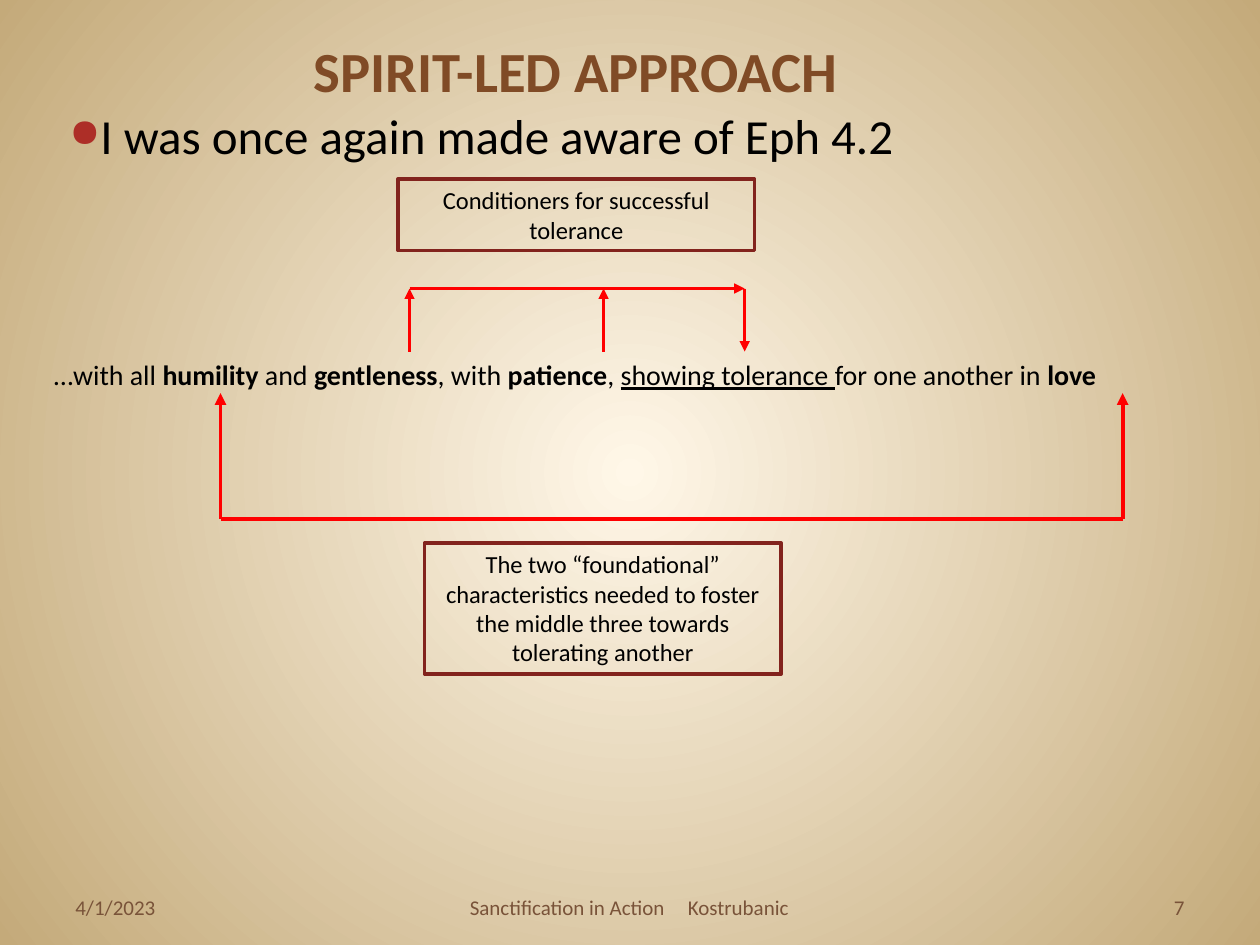
from dataclasses import dataclass

from lxml import etree
from pptx import Presentation
from pptx.dml.color import RGBColor
from pptx.enum.shapes import MSO_CONNECTOR, MSO_SHAPE
from pptx.enum.text import MSO_ANCHOR, PP_ALIGN
from pptx.oxml.ns import qn
from pptx.shapes.base import BaseShape
from pptx.slide import Slide
from pptx.text.text import TextFrame
from pptx.util import Pt

LEFT, CENTER, RIGHT = PP_ALIGN.LEFT, PP_ALIGN.CENTER, PP_ALIGN.RIGHT
TOP, MIDDLE, BOTTOM = MSO_ANCHOR.TOP, MSO_ANCHOR.MIDDLE, MSO_ANCHOR.BOTTOM
STRAIGHT, RECTANGLE = MSO_CONNECTOR.STRAIGHT, MSO_SHAPE.RECTANGLE


@dataclass(frozen=True)
class Theme:
    font: str = "Calibri"
    glow: str = "FFF7E8"
    edge: str = "C4AA7A"
    title: str = "804B26"
    text: str = "000000"
    footer: str = "795339"
    bullet: str = "AD2E27"
    arrow: str = "FF0000"
    frame: str = "82231D"
    title_size: float = 32.4
    body_size: float = 28
    verse_size: float = 16
    note_size: float = 14
    footer_size: float = 12
    frame_width: float = 2
    upper_line: float = 1.75
    lower_line: float = 2.25


THEME = Theme()


@dataclass(frozen=True)
class Run:
    text: str
    bold: bool = False
    underline: bool = False


@dataclass(frozen=True)
class Label:
    runs: tuple[Run, ...]
    left: float
    top: float
    width: float
    height: float
    size: float
    color: str = THEME.text
    align: PP_ALIGN = LEFT
    anchor: MSO_ANCHOR = TOP
    framed: bool = False


@dataclass(frozen=True)
class Line:
    start: tuple[float, float]
    end: tuple[float, float]
    width: float
    arrow: bool = True


def footer(text: str, left: float, width: float, align: PP_ALIGN = LEFT) -> Label:
    return Label((Run(text),), left, 491.76, width, 37.44,
                 THEME.footer_size, THEME.footer, align, BOTTOM)


def note(text: str, left: float, top: float, height: float) -> Label:
    return Label((Run(text),), left, top, 203.76, height,
                 THEME.note_size, align=CENTER, framed=True)


TITLE = Label((Run("SPIRIT-LED APPROACH", bold=True),), 36, 10.08, 586, 52.56,
              THEME.title_size, THEME.title, CENTER, BOTTOM)
BODY = Label((Run("I was once again made aware of Eph 4.2"),), 36, 56.88, 648, 44,
             THEME.body_size)
VERSE = Label(
    (
        Run("…with all "),
        Run("humility", bold=True),
        Run(" and "),
        Run("gentleness", bold=True),
        Run(", with "),
        Run("patience", bold=True),
        Run(", "),
        Run("showing tolerance ", underline=True),
        Run("for one another in "),
        Run("love", bold=True),
    ),
    23.76, 200.88, 642.24, 26.64, THEME.verse_size)
NOTES = (
    note("Conditioners for successful tolerance", 227.52, 102.24, 41.04),
    note("The two “foundational” characteristics needed to foster "
         "the middle three towards tolerating another", 242.64, 310.32, 74.88),
)
FOOTERS = (
    footer("4/1/2023", 36, 167.76),
    footer("Sanctification in Action", 261.4, 130),
    footer("Kostrubanic", 386, 88),
    footer("7", 516.24, 167.76, RIGHT),
)

GENTLENESS_X, PATIENCE_X, TOLERANCE_X = 234, 344.88, 425.52
HUMILITY_X, LOVE_X = 126, 641.52
UPPER_TOP, UPPER_BOTTOM = 164.88, 200.88
LOWER_TOP, LOWER_BOTTOM = 224.64, 296.64
LINES = (
    Line((HUMILITY_X, LOWER_BOTTOM), (LOVE_X, LOWER_BOTTOM), THEME.lower_line, False),
    *(Line((x, LOWER_BOTTOM), (x, LOWER_TOP), THEME.lower_line)
      for x in (HUMILITY_X, LOVE_X)),
    Line((GENTLENESS_X, UPPER_TOP), (TOLERANCE_X, UPPER_TOP), THEME.upper_line),
    *(Line((x, UPPER_BOTTOM), (x, UPPER_TOP), THEME.upper_line)
      for x in (GENTLENESS_X, PATIENCE_X)),
    Line((TOLERANCE_X, UPPER_TOP), (TOLERANCE_X, UPPER_BOTTOM), THEME.upper_line),
)


def rgb(color: str) -> RGBColor:
    return RGBColor.from_string(color)


def paint_background(slide: Slide) -> None:
    fill = slide.background.fill
    fill.gradient()
    for stop, color, position in zip(fill.gradient_stops, (THEME.glow, THEME.edge), (0, 1)):
        stop.color.rgb = rgb(color)
        stop.position = position
    gradient = slide.element.find(".//" + qn("a:gradFill"))
    gradient.remove(gradient.find(qn("a:lin")))
    circle = etree.SubElement(gradient, qn("a:path"), {"path": "circle"})
    sides = {side: "50000" for side in "ltrb"}
    etree.SubElement(circle, qn("a:fillToRect"), sides)


def write_text(frame: TextFrame, label: Label) -> None:
    frame.word_wrap = True
    frame.vertical_anchor = label.anchor
    paragraph = frame.paragraphs[0]
    paragraph.alignment = label.align
    paragraph.font.name = THEME.font
    paragraph.font.size = Pt(label.size)
    paragraph.font.color.rgb = rgb(label.color)
    for part in label.runs:
        run = paragraph.add_run()
        run.text = part.text
        if part.bold:
            run.font.bold = True
        if part.underline:
            run.font.underline = True


def add_label(slide: Slide, label: Label) -> BaseShape:
    bounds = [Pt(value) for value in (label.left, label.top, label.width, label.height)]
    if label.framed:
        shape = slide.shapes.add_shape(RECTANGLE, *bounds)
        shape.shadow.inherit = False
        shape.fill.background()
        shape.line.color.rgb = rgb(THEME.frame)
        shape.line.width = Pt(THEME.frame_width)
    else:
        shape = slide.shapes.add_textbox(*bounds)
    write_text(shape.text_frame, label)
    return shape


def add_bullet(shape: BaseShape) -> None:
    frame = shape.text_frame
    frame.margin_left = frame.margin_right = Pt(3.6)
    properties = frame.paragraphs[0]._p.get_or_add_pPr()
    properties.set("marL", "0")
    properties.set("indent", "0")
    bullet = (
        etree.Element(qn("a:buClr")),
        etree.Element(qn("a:buSzPct"), {"val": "80000"}),
        etree.Element(qn("a:buChar"), {"char": "●"}),
    )
    etree.SubElement(bullet[0], qn("a:srgbClr"), {"val": THEME.bullet})
    for index, element in enumerate(bullet):
        properties.insert(index, element)


def add_line(slide: Slide, line: Line) -> None:
    ends = [Pt(value) for value in (*line.start, *line.end)]
    connector = slide.shapes.add_connector(STRAIGHT, *ends)
    connector.line.color.rgb = rgb(THEME.arrow)
    connector.line.width = Pt(line.width)
    properties = connector._element.spPr
    if line.arrow:
        outline = properties.find(qn("a:ln"))
        etree.SubElement(outline, qn("a:tailEnd"), {"type": "triangle"})
    etree.SubElement(properties, qn("a:effectLst"))


def main() -> None:
    presentation = Presentation()
    presentation.slide_width, presentation.slide_height = Pt(720), Pt(540)
    slide = presentation.slides.add_slide(presentation.slide_layouts[6])
    paint_background(slide)
    add_label(slide, TITLE)
    add_bullet(add_label(slide, BODY))
    for label in (*FOOTERS, VERSE, *NOTES):
        add_label(slide, label)
    for line in LINES:
        add_line(slide, line)
    presentation.save("out.pptx")


if __name__ == "__main__":
    main()
